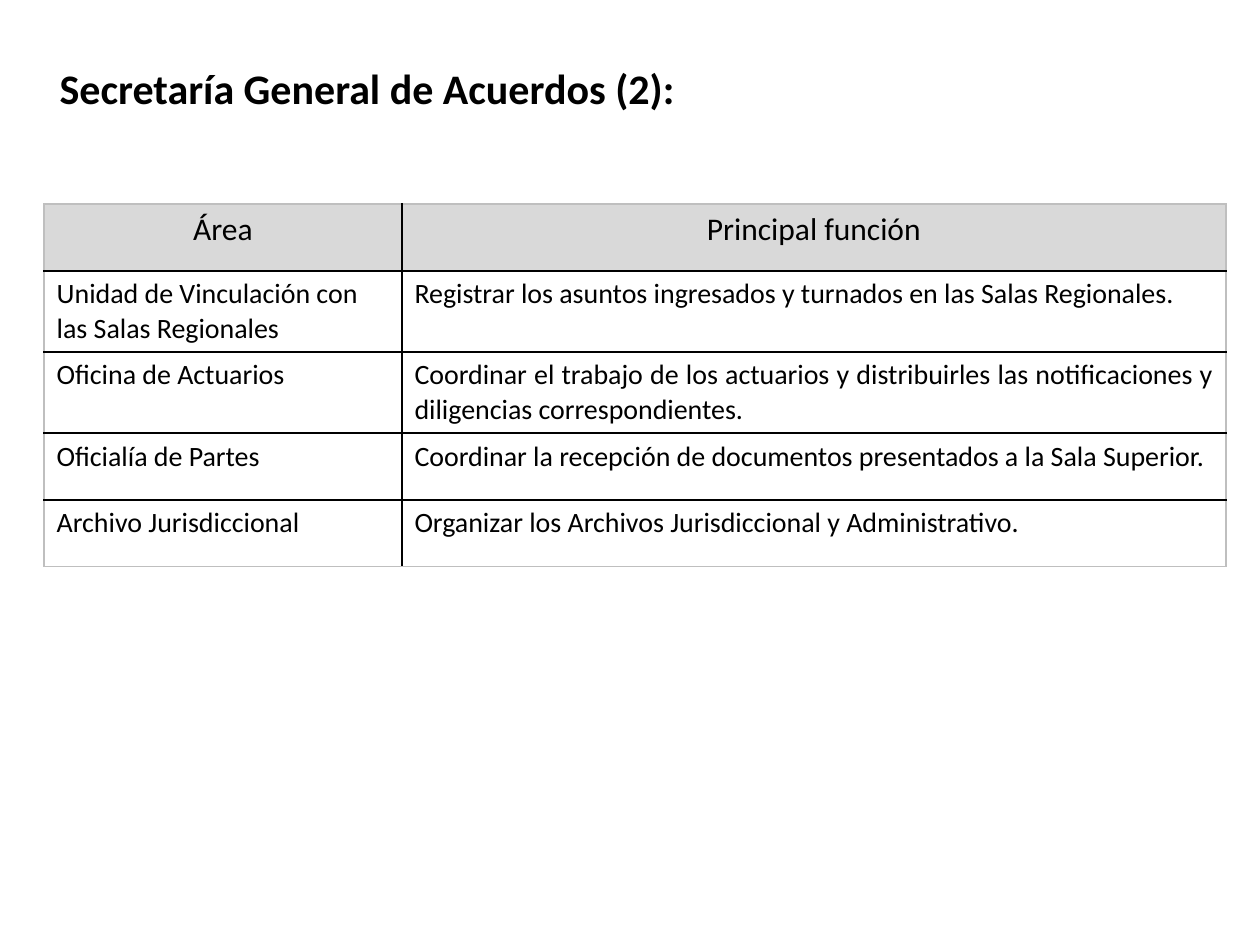
from lxml import etree
from pptx import Presentation, util as u
from pptx.dml.color import RGBColor
from pptx.enum import shapes, text
from pptx.oxml.ns import qn

COLORS = {"ink": "000000", "header": "D9D9D9", "edge": "BFBFBF"}
ALIGN = text.PP_ALIGN


def write(frame, words, size, align=ALIGN.LEFT, bold=False, spacing=None):
    frame.word_wrap = True
    para = frame.paragraphs[0]
    para.alignment = align
    para.line_spacing = spacing
    span = para.add_run()
    span.text = words
    span.font.name = "Calibri"
    span.font.size = u.Pt(size)
    span.font.bold = bold
    span.font.color.rgb = RGBColor.from_string(COLORS["ink"])


def add_border(cell, side, color):
    line = etree.SubElement(cell._tc.get_or_add_tcPr(), qn(f"a:ln{side}"), w=str(u.Pt(1)))
    fill = etree.SubElement(line, qn("a:solidFill"))
    etree.SubElement(fill, qn("a:srgbClr"), val=color)


deck = Presentation()
deck.slide_width, deck.slide_height = u.Inches(10), u.Inches(7.5)
page = deck.slides.add_slide(deck.slide_layouts[6])

# Table of areas and their functions
rows = [
    ("Área", "Principal función"),
    ("Unidad de Vinculación con las Salas Regionales",
     "Registrar los asuntos ingresados y turnados en las Salas Regionales."),
    ("Oficina de Actuarios",
     "Coordinar el trabajo de los actuarios y distribuirles las notificaciones y "
     "diligencias correspondientes."),
    ("Oficialía de Partes",
     "Coordinar la recepción de documentos presentados a la Sala Superior."),
    ("Archivo Jurisdiccional",
     "Organizar los Archivos Jurisdiccional y Administrativo."),
]
widths = [2.84, 6.54]
heights = [0.53, 0.64, 0.64, 0.53, 0.53]
table = page.shapes.add_table(
    len(rows), len(widths), u.Inches(0.35), u.Inches(1.62),
    u.Inches(sum(widths)), u.Inches(sum(heights))).table
table.horz_banding = False
for column, width in zip(table.columns, widths):
    column.width = u.Inches(width)

for r, (row, height) in enumerate(zip(rows, heights)):
    table.rows[r].height = u.Inches(height)
    for c, words in enumerate(row):
        cell = table.cell(r, c)
        # Grey outer edge, black inner lines
        outer = {"L": c == 0, "R": c == len(widths) - 1,
                 "T": r == 0, "B": r == len(rows) - 1}
        for side, is_outer in outer.items():
            add_border(cell, side, COLORS["edge" if is_outer else "ink"])
        if r == 0:
            cell.fill.solid()
            cell.fill.fore_color.rgb = RGBColor.from_string(COLORS["header"])
            write(cell.text_frame, words, 18, align=ALIGN.CENTER)
        else:
            cell.fill.background()
            write(cell.text_frame, words, 16, align=ALIGN.JUSTIFY if c else ALIGN.LEFT)

# Title
title = page.shapes.add_shape(
    shapes.MSO_SHAPE.ROUNDED_RECTANGLE,
    u.Inches(0.35), u.Inches(0.47), u.Inches(8.74), u.Inches(0.51))
title.shadow.inherit = False
title.fill.background()
title.line.fill.background()
title.text_frame.vertical_anchor = text.MSO_ANCHOR.MIDDLE
write(title.text_frame, "Secretaría General de Acuerdos (2):", 24, bold=True, spacing=0.9)

deck.save("out.pptx")
